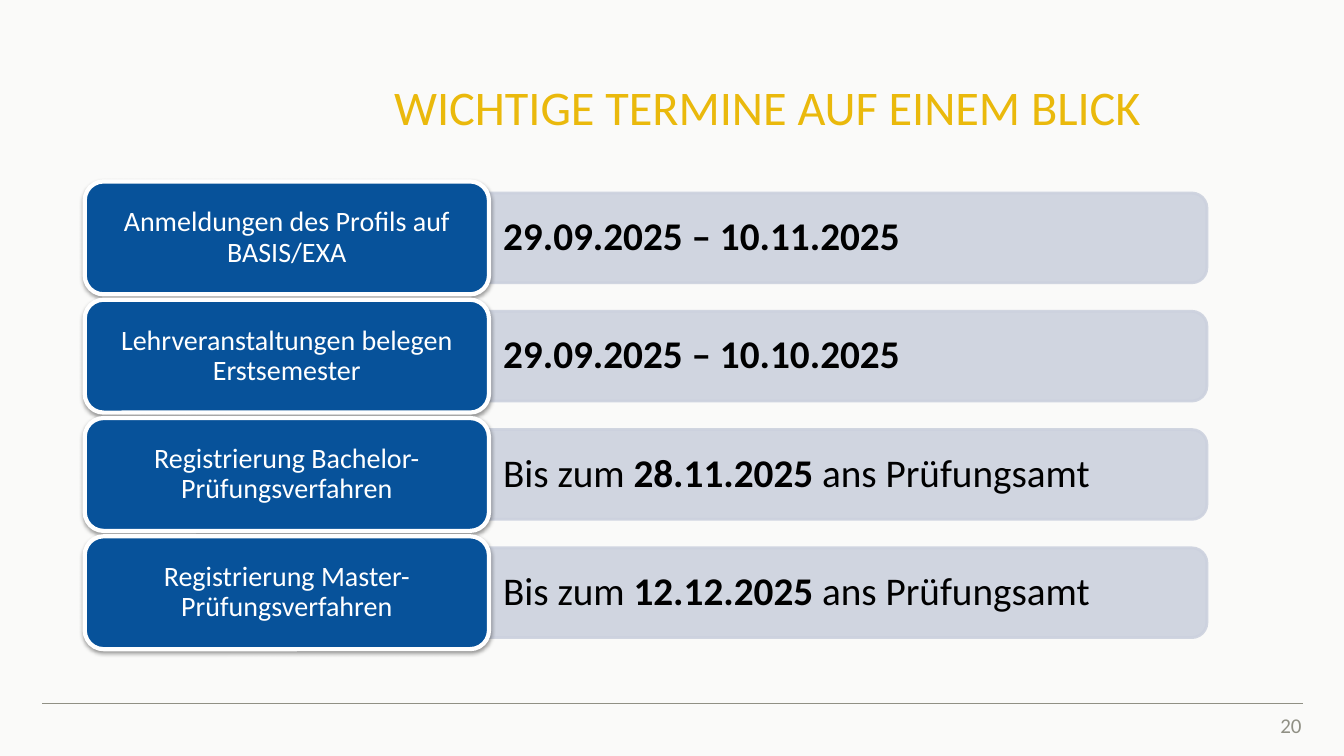
"""Build the slide with the key dates of the semester."""
from lxml import etree
from pptx import Presentation
from pptx.dml.color import RGBColor
from pptx.enum.shapes import MSO_CONNECTOR, MSO_SHAPE
from pptx.enum.text import MSO_ANCHOR, PP_ALIGN
from pptx.oxml.ns import qn
from pptx.util import Inches, Pt

STRAIGHT = MSO_CONNECTOR.STRAIGHT
ROUNDED, ROUNDED_TOP = MSO_SHAPE.ROUNDED_RECTANGLE, MSO_SHAPE.ROUND_2_SAME_RECTANGLE
MIDDLE, BOTTOM = MSO_ANCHOR.MIDDLE, MSO_ANCHOR.BOTTOM
LEFT, CENTER, RIGHT = PP_ALIGN.LEFT, PP_ALIGN.CENTER, PP_ALIGN.RIGHT

TITLE = "WICHTIGE TERMINE AUF EINEM BLICK"
PAGE_NUMBER = "20"
DEADLINES = [
    ("Anmeldungen des Profils auf BASIS/EXA", [("29.09.2025 – 10.11.2025", True)]),
    ("Lehrveranstaltungen belegen Erstsemester", [("29.09.2025 – 10.10.2025", True)]),
    ("Registrierung Bachelor-Prüfungsverfahren",
     [("Bis zum ", False), ("28.11.2025 ", True), ("ans Prüfungsamt", False)]),
    ("Registrierung Master-Prüfungsverfahren",
     [("Bis zum ", False), ("12.12.2025 ", True), ("ans Prüfungsamt", False)]),
]

THEME = {
    "font": "Calibri",
    "background": "FAFAF9", "title": "EAB90C", "muted": "909085",
    "card": "07529A", "card_text": "FFFFFF", "bar": "CCD1DE", "bar_text": "000000",
    "shadow": "000000",
    "title_size": 34.5, "date_size": 28, "card_size": 20, "number_size": 15,
}

CARD_LEFT, CARD_WIDTH, CARD_HEIGHT = 0.84, 4.01, 1.12
FIRST_TOP, LAST_TOP = 1.8, 5.32
PITCH = (LAST_TOP - FIRST_TOP) / (len(DEADLINES) - 1)
BAR_LENGTH, BAR_THICKNESS = 7.12, 0.89
CORNER = 0.167


def color(name):
    return RGBColor.from_string(THEME[name])


def write(holder, runs, *, size, ink, align=LEFT, anchor=MIDDLE,
          insets=(0, 0, 0, 0), spacing=None):
    """Fill a shape with one paragraph of (text, bold) runs."""
    frame = holder.text_frame
    frame.word_wrap = True
    frame.vertical_anchor = anchor
    (frame.margin_left, frame.margin_top,
     frame.margin_right, frame.margin_bottom) = map(Inches, insets)
    paragraph = frame.paragraphs[0]
    paragraph.alignment = align
    if spacing:
        paragraph.line_spacing = spacing
    for words, bold in runs:
        run = paragraph.add_run()
        run.text = words
        run.font.name = THEME["font"]
        run.font.size = Pt(THEME[size])
        run.font.bold = bold
        run.font.color.rgb = color(ink)


def add_block(slide, preset, box, fill, line, line_width, adjustments):
    block = slide.shapes.add_shape(preset, *map(Inches, box))
    block.shadow.inherit = False
    block.fill.solid()
    block.fill.fore_color.rgb = color(fill)
    block.line.color.rgb = color(line)
    block.line.width = Pt(line_width)
    for index, value in enumerate(adjustments):
        block.adjustments[index] = value
    return block


def set_alpha(color_element, percent):
    etree.SubElement(color_element, qn("a:alpha"), val=str(percent * 1000))


def add_shadow(card):
    effects = card.element.spPr.find(qn("a:effectLst"))
    shadow = etree.SubElement(effects, qn("a:outerShdw"), blurRad=str(Pt(3.1)),
                              dist=str(Pt(1.6)), dir="5400000", rotWithShape="0")
    set_alpha(etree.SubElement(shadow, qn("a:srgbClr"), val=THEME["shadow"]), 38)


def add_deadline(slide, top, task, dates):
    center_x = CARD_LEFT + CARD_WIDTH + BAR_LENGTH / 2
    center_y = top + CARD_HEIGHT / 2
    bar_box = (center_x - BAR_THICKNESS / 2, center_y - BAR_LENGTH / 2,
               BAR_THICKNESS, BAR_LENGTH)
    bar = add_block(slide, ROUNDED_TOP, bar_box, "bar", "bar", 2, (CORNER, 0))
    bar.rotation = 90
    for tint in bar.element.spPr.iter(qn("a:srgbClr")):
        set_alpha(tint, 90)
    write(bar, dates, size="date_size", ink="bar_text",
          insets=(0.27, 0.14, 0.27, 0.14), spacing=0.9)
    bar.element.txBody.bodyPr.set("vert", "vert270")

    card_box = (CARD_LEFT, top, CARD_WIDTH, CARD_HEIGHT)
    card = add_block(slide, ROUNDED, card_box, "card", "card_text", 3, (CORNER,))
    add_shadow(card)
    write(card, [(task, False)], size="card_size", ink="card_text", align=CENTER,
          insets=(0.08, 0.04, 0.08, 0.04), spacing=0.9)


def main():
    deck = Presentation()
    deck.slide_width, deck.slide_height = Inches(13.33), Inches(7.5)
    slide = deck.slides.add_slide(deck.slide_layouts[6])
    slide.background.fill.solid()
    slide.background.fill.fore_color.rgb = color("background")

    footer_rule = slide.shapes.add_connector(
        STRAIGHT, Inches(0.42), Inches(6.98), Inches(12.92), Inches(6.98))
    footer_rule.line.color.rgb = color("muted")
    footer_rule.line.width = Pt(1)
    etree.SubElement(footer_rule.element.spPr, qn("a:effectLst"))

    heading = slide.shapes.add_textbox(*map(Inches, (3.91, 0.19, 8.87, 1.15)))
    write(heading, [(TITLE, False)], size="title_size", ink="title",
          anchor=BOTTOM, spacing=Pt(37.2))

    for row, (task, dates) in enumerate(DEADLINES):
        add_deadline(slide, FIRST_TOP + row * PITCH, task, dates)

    page_number = slide.shapes.add_textbox(*map(Inches, (12.08, 6.98, 0.83, 0.42)))
    write(page_number, [(PAGE_NUMBER, False)], size="number_size", ink="muted",
          align=RIGHT)
    deck.save("out.pptx")


if __name__ == "__main__":
    main()
